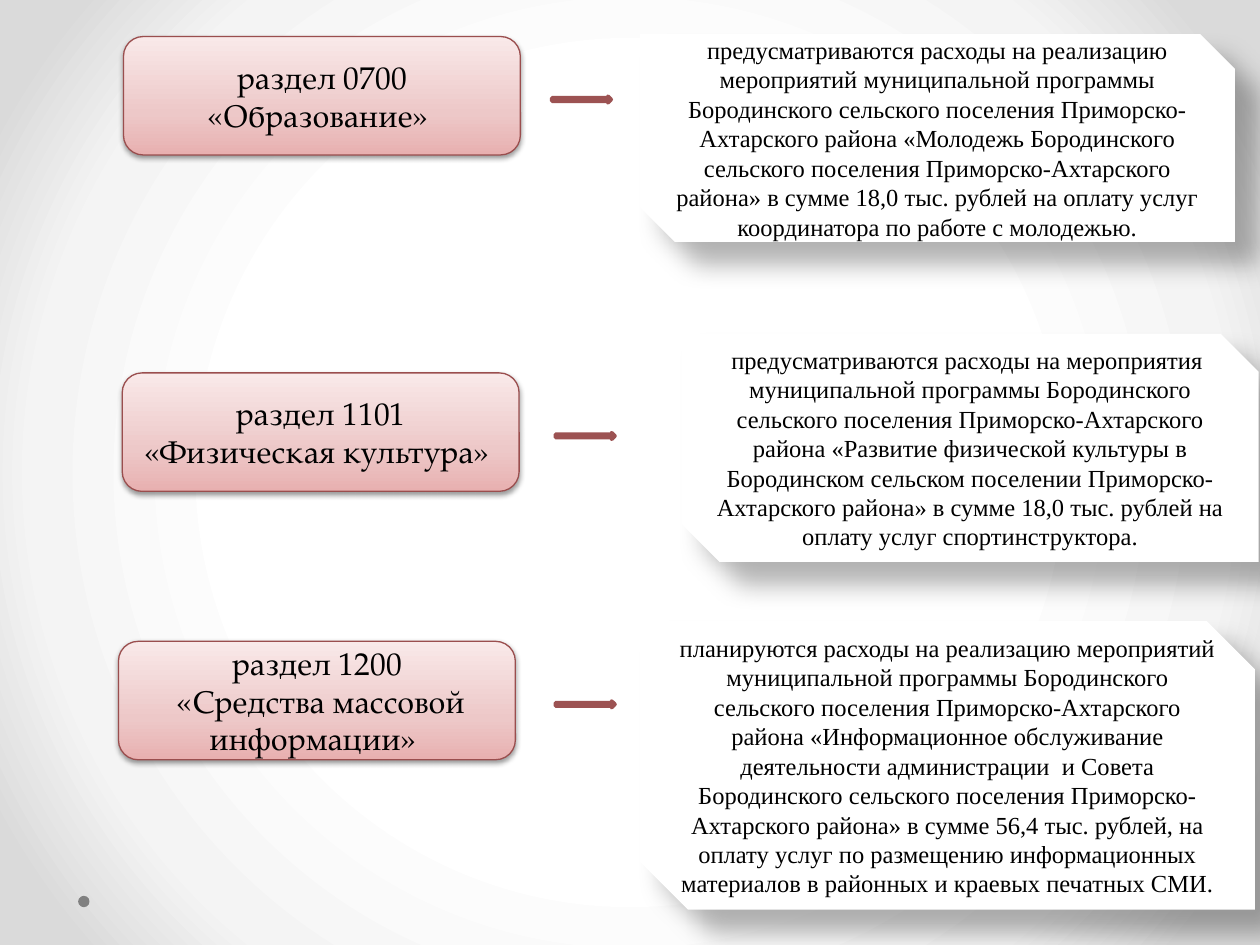
from lxml import etree
from pptx import Presentation
from pptx.dml.color import RGBColor
from pptx.enum import shapes, text
from pptx.oxml import ns
from pptx.util import Inches, Pt

BLACK = RGBColor(0x00, 0x00, 0x00)
WHITE = RGBColor(0xFF, 0xFF, 0xFF)
GRAY = RGBColor(0x80, 0x80, 0x80)
SECTION_EDGE = RGBColor(0x9A, 0x4E, 0x4E)
ARROW_EDGE = RGBColor(0x9C, 0x52, 0x52)
BACKDROP_STOPS = [(50, WHITE), (76, RGBColor(0xF4, 0xF4, 0xF4)), (92, RGBColor(0xDA, 0xDA, 0xDA))]
SECTION_STOPS = [(0, RGBColor(0xE8, 0xB0, 0xB0)), (35, RGBColor(0xED, 0xC8, 0xC8)),
                 (100, RGBColor(0xF9, 0xE9, 0xE9))]

# Shadows: opacity %, blur pt, distance pt, direction in degrees
SECTION_SHADOW = (38, 3.1, 1.6, 90)
EXPENSE_SHADOW = (30, 15, 18, 45)

SECTION_SIZE = (3.15, 0.94)
ARROW_SIZE = (0.47, 0.05)

# Each row: section name and its corner, arrow left, expense text and its box
ROWS = [
    ("раздел 0700 «Образование» ", (0.98, 0.29), 4.38,
     "предусматриваются расходы на реализацию мероприятий муниципальной программы "
     "Бородинского сельского поселения Приморско-Ахтарского района «Молодежь "
     "Бородинского сельского поселения Приморско-Ахтарского района» в сумме 18,0 тыс. "
     "рублей на оплату услуг координатора по работе с молодежью.",
     (5.08, 0.27, 4.72, 1.65)),
    ("раздел 1101 «Физическая культура» ", (0.97, 2.96), 4.41,
     "предусматриваются расходы на мероприятия  муниципальной программы Бородинского "
     "сельского поселения Приморско-Ахтарского района «Развитие физической культуры в "
     "Бородинском сельском поселении Приморско-Ахтарского района» в сумме 18,0 тыс. "
     "рублей на оплату услуг спортинструктора.",
     (5.41, 2.65, 4.58, 1.81)),
    ("раздел 1200\n «Средства массовой информации» ", (0.94, 5.09), 4.41,
     "планируются расходы на реализацию мероприятий муниципальной программы "
     "Бородинского сельского поселения Приморско-Ахтарского района «Информационное "
     "обслуживание деятельности администрации  и Совета Бородинского сельского "
     "поселения Приморско-Ахтарского района» в сумме 56,4 тыс. рублей, на оплату услуг "
     "по размещению информационных материалов в районных и краевых печатных СМИ.",
     (5.08, 4.93, 4.88, 2.29)),
]


def add(parent, tag, **attributes):
    return etree.SubElement(parent, ns.qn(tag), {k: str(v) for k, v in attributes.items()})


def set_gradient(fill, owner, stops, angle=None):
    """Linear gradient at an angle, or one spreading from the centre without it."""
    fill.gradient()
    gradient = owner.find(".//" + ns.qn("a:gradFill"))
    for child in list(gradient):
        gradient.remove(child)
    stop_list = add(gradient, "a:gsLst")
    for position, color in stops:
        add(add(stop_list, "a:gs", pos=position * 1000), "a:srgbClr", val=color)
    if angle is None:
        add(add(gradient, "a:path", path="circle"), "a:fillToRect",
            l=50000, t=50000, r=50000, b=50000)
    else:
        add(gradient, "a:lin", ang=angle * 60000, scaled=0)


def set_shadow(shape, opacity, blur, distance, direction):
    effects = shape.element.spPr.find(ns.qn("a:effectLst"))
    outer = add(effects, "a:outerShdw", blurRad=Pt(blur), dist=Pt(distance),
                dir=direction * 60000, algn="tl", rotWithShape=0)
    add(add(outer, "a:srgbClr", val=BLACK), "a:alpha", val=opacity * 1000)


def add_block(slide, kind, box, fill=WHITE, edge=None, edge_width=0.75):
    block = slide.shapes.add_shape(kind, *map(Inches, box))
    block.shadow.inherit = False
    block.fill.solid()
    block.fill.fore_color.rgb = fill
    if edge is None:
        block.line.fill.background()
    else:
        block.line.color.rgb = edge
        block.line.width = Pt(edge_width)
    return block


def set_text(block, wording, font, size):
    frame = block.text_frame
    frame.word_wrap = True
    frame.vertical_anchor = text.MSO_ANCHOR.MIDDLE
    frame.text = wording
    for paragraph in frame.paragraphs:
        paragraph.alignment = text.PP_ALIGN.CENTER
        for run in paragraph.runs:
            run.font.name = font
            run.font.size = Pt(size)
            run.font.color.rgb = BLACK


def main():
    deck = Presentation()
    deck.slide_width, deck.slide_height = Inches(10), Inches(7.5)
    slide = deck.slides.add_slide(deck.slide_layouts[6])
    kinds = shapes.MSO_SHAPE

    # Backdrop and its corner dot
    set_gradient(slide.background.fill, slide.element, BACKDROP_STOPS)
    add_block(slide, kinds.OVAL, (0.62, 7.11, 0.09, 0.09), GRAY)

    for name, (left, top), arrow_left, expense_text, expense_box in ROWS:
        # Budget section
        section = add_block(slide, kinds.ROUNDED_RECTANGLE, (left, top, *SECTION_SIZE),
                            edge=SECTION_EDGE)
        set_gradient(section.fill, section.element, SECTION_STOPS, angle=270)
        set_shadow(section, *SECTION_SHADOW)
        set_text(section, name, "TeX Gyre Pagella", 18)

        # Planned expense
        expense = add_block(slide, kinds.SNIP_2_DIAG_RECTANGLE, expense_box)
        set_shadow(expense, *EXPENSE_SHADOW)
        set_text(expense, expense_text, "Times New Roman", 14)

        # Arrow, level with the middle of the section
        arrow_top = top + (SECTION_SIZE[1] - ARROW_SIZE[1]) / 2 + 0.03
        add_block(slide, kinds.RIGHT_ARROW, (arrow_left, arrow_top, *ARROW_SIZE),
                  edge=ARROW_EDGE, edge_width=2.25)

    deck.save("out.pptx")


if __name__ == "__main__":
    main()
